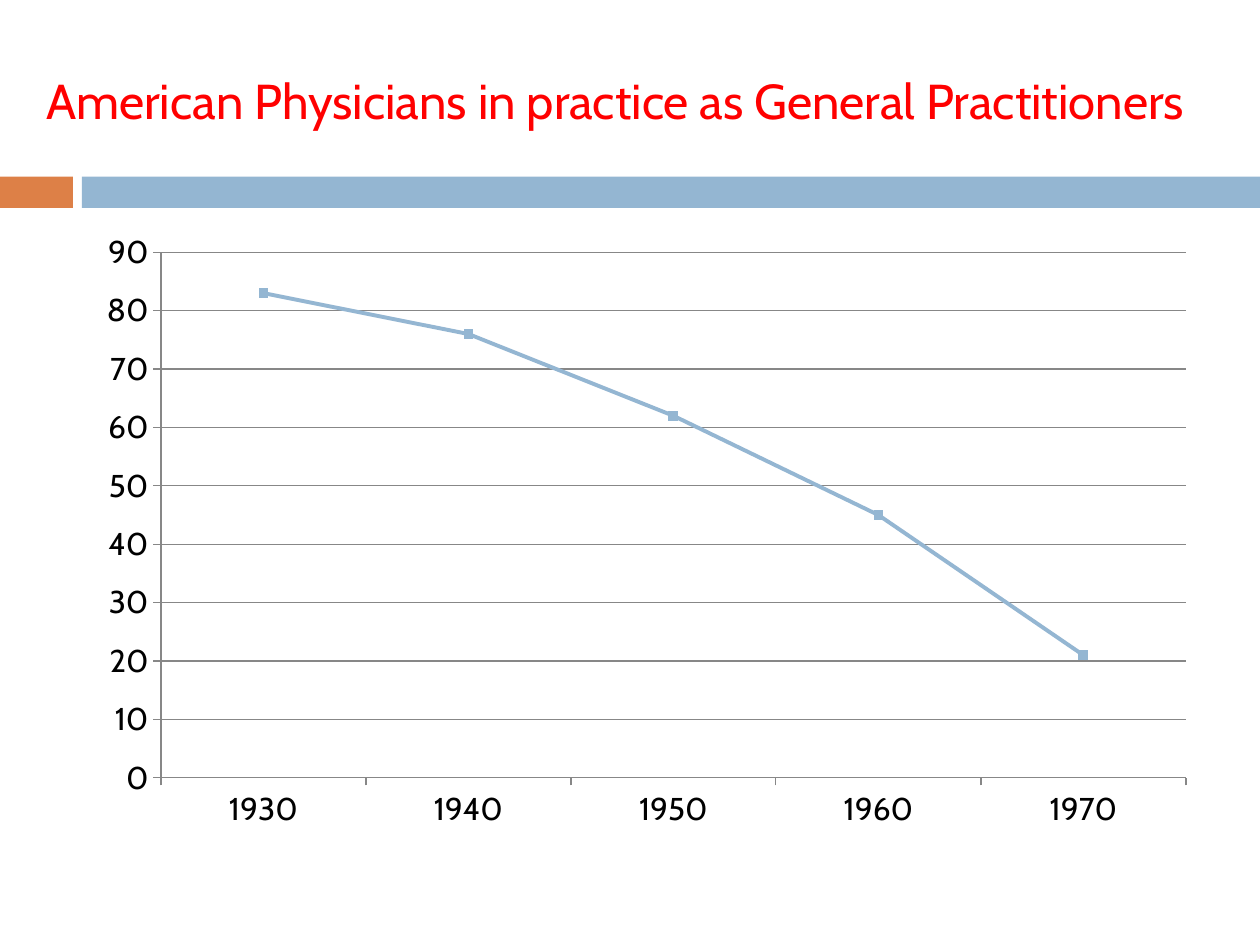
from pptx import Presentation
from pptx.chart.data import CategoryChartData
from pptx.dml.color import RGBColor
from pptx.enum.chart import XL_CHART_TYPE, XL_MARKER_STYLE, XL_TICK_MARK
from pptx.enum.shapes import MSO_SHAPE
from pptx.enum.text import MSO_ANCHOR, PP_ALIGN
from pptx.util import Cm, Pt

RECT = MSO_SHAPE.RECTANGLE
LINE = XL_CHART_TYPE.LINE_MARKERS
SQUARE = XL_MARKER_STYLE.SQUARE
OUTSIDE = XL_TICK_MARK.OUTSIDE
MIDDLE = MSO_ANCHOR.MIDDLE
CENTER = PP_ALIGN.CENTER

FONT = "Cabin"
COLORS = {"orange": "DD8047", "blue": "94B6D2", "title": "FF0000",
          "text": "000000", "axis": "878787"}


def rgb(name):
    return RGBColor.from_string(COLORS[name])


prs = Presentation()
prs.slide_width, prs.slide_height = Cm(25.4), Cm(19.05)
s = prs.slides.add_slide(prs.slide_layouts[5])

# Divider band
for left, width, color in [(0, 1.47, "orange"), (1.65, 23.75, "blue")]:
    sp = s.shapes.add_shape(RECT, Cm(left), Cm(3.56), Cm(width), Cm(0.63))
    sp.shadow.inherit = False
    sp.fill.solid()
    sp.fill.fore_color.rgb = rgb(color)
    sp.line.fill.background()

# Title
title = s.shapes.title
title.left, title.top, title.width, title.height = Cm(0.43), Cm(0.64), Cm(23.93), Cm(2.74)
tf = title.text_frame
tf.text = "American Physicians in practice as General Practitioners"
tf.word_wrap = True
tf.vertical_anchor = MIDDLE
p = tf.paragraphs[0]
p.alignment = CENTER
r = p.runs[0]
r.font.name, r.font.size = FONT, Pt(28)
r.font.color.rgb = rgb("title")

# Line chart
data = CategoryChartData()
data.categories = ["1930", "1940", "1950", "1960", "1970"]
data.add_series("Series 1", [83, 76, 62, 45, 21])
chart = s.shapes.add_chart(LINE, Cm(1.7), Cm(4.45), Cm(22.66), Cm(12.5), data).chart
chart.has_legend = False
chart.has_title = False
chart.font.name, chart.font.size = FONT, Pt(18)
chart.font.color.rgb = rgb("text")

value_axis = chart.value_axis
value_axis.minimum_scale, value_axis.maximum_scale, value_axis.major_unit = 0, 90, 10
value_axis.has_major_gridlines = True
for axis in (chart.category_axis, value_axis):
    axis.major_tick_mark = OUTSIDE
for lines in (chart.category_axis, value_axis, value_axis.major_gridlines):
    lines.format.line.color.rgb = rgb("axis")
    lines.format.line.width = Pt(0.75)

plot = chart.plots[0]
plot.vary_by_categories = False
series = plot.series[0]
series.smooth = False
series.format.line.color.rgb = rgb("blue")
series.format.line.width = Pt(2.25)
marker = series.marker
marker.style, marker.size = SQUARE, 5
marker.format.fill.solid()
marker.format.fill.fore_color.rgb = rgb("blue")
marker.format.line.color.rgb = rgb("blue")

prs.save("out.pptx")
